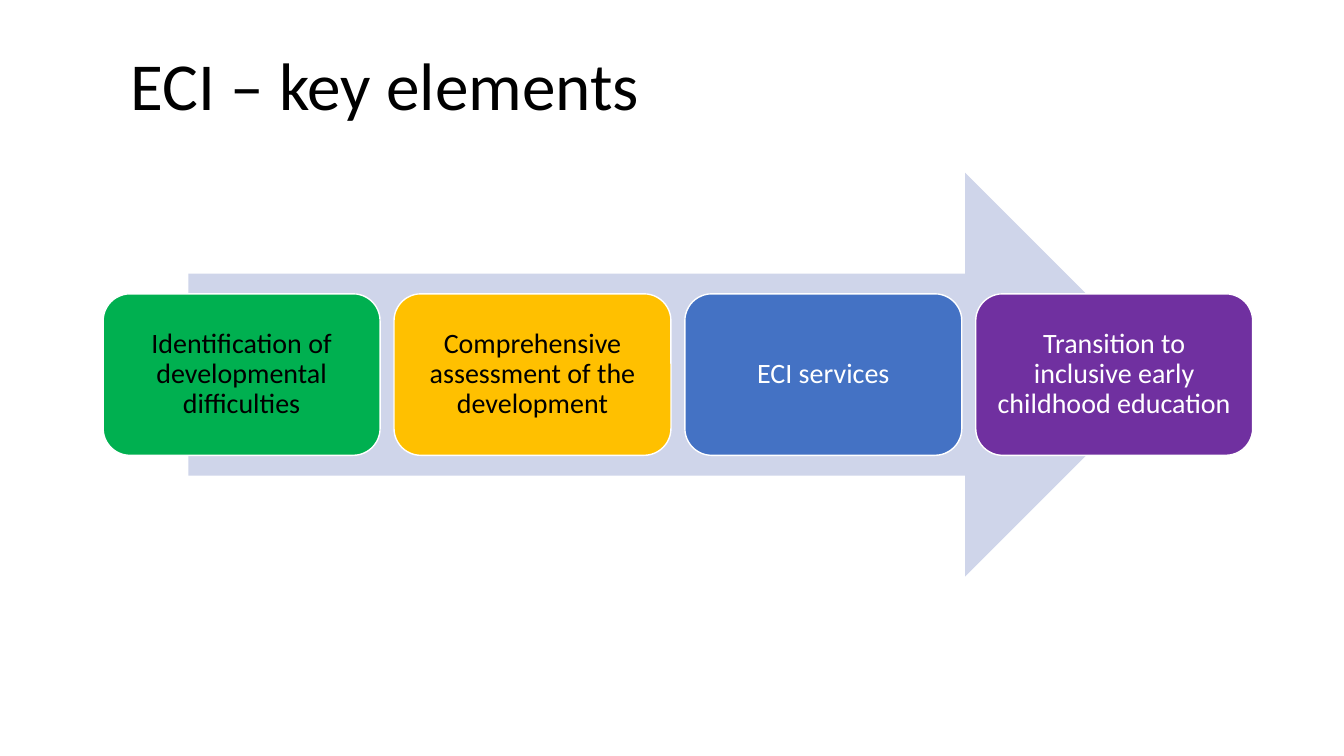
"""Build the slide on the key elements of ECI as four steps along an arrow."""
from dataclasses import dataclass

from pptx import Presentation
from pptx.dml.color import RGBColor as Color
from pptx.enum.shapes import MSO_SHAPE as Preset
from pptx.enum.text import MSO_ANCHOR as Anchor, PP_ALIGN as Align
from pptx.util import Cm, Pt


@dataclass(frozen=True)
class Theme:
    font: str = "Calibri"
    title_size: int = 48
    step_size: int = 20
    line_spacing: float = 0.9
    outline_width: int = 1
    black: str = "000000"
    white: str = "FFFFFF"
    arrow: str = "CFD5EA"
    green: str = "00B050"
    amber: str = "FFC000"
    blue: str = "4472C4"
    purple: str = "7030A0"


THEME = Theme()
TITLE = "ECI – key elements"
STEPS = [
    ("Identification of developmental difficulties", THEME.green, THEME.black),
    ("Comprehensive assessment of the development", THEME.amber, THEME.black),
    ("ECI services", THEME.blue, THEME.white),
    ("Transition to inclusive early childhood education", THEME.purple, THEME.white),
]

SLIDE_SIZE = (33.87, 19.05)
TITLE_BOX = (3.05, 0.86, 28.27, 2.74)
ARROW_BOX = (4.75, 4.35, 24.66, 10.18)
STEP_LEFT, STEP_WIDTH, STEP_HEIGHT, STEP_GAP = 2.6, 6.98, 4.07, 0.35
STEP_INSET = 0.2


def write(shape, text, size, color, align):
    frame = shape.text_frame
    frame.word_wrap = True
    frame.vertical_anchor = Anchor.MIDDLE
    paragraph = frame.paragraphs[0]
    paragraph.text = text
    paragraph.alignment = align
    paragraph.line_spacing = THEME.line_spacing
    paragraph.font.name = THEME.font
    paragraph.font.size = Pt(size)
    paragraph.font.color.rgb = Color.from_string(color)


def add_filled(slide, preset, box, fill):
    shape = slide.shapes.add_shape(preset, *map(Cm, box))
    shape.shadow.inherit = False
    shape.fill.solid()
    shape.fill.fore_color.rgb = Color.from_string(fill)
    shape.line.fill.background()
    return shape


def add_step(slide, box, text, fill, color):
    shape = add_filled(slide, Preset.ROUNDED_RECTANGLE, box, fill)
    shape.line.color.rgb = Color.from_string(THEME.white)
    shape.line.width = Pt(THEME.outline_width)
    frame = shape.text_frame
    frame.margin_left = frame.margin_right = Cm(STEP_INSET)
    frame.margin_top = frame.margin_bottom = Cm(STEP_INSET)
    write(shape, text, THEME.step_size, color, Align.CENTER)


def main():
    presentation = Presentation()
    presentation.slide_width, presentation.slide_height = map(Cm, SLIDE_SIZE)
    slide = presentation.slides.add_slide(presentation.slide_layouts[6])

    title = slide.shapes.add_textbox(*map(Cm, TITLE_BOX))
    write(title, TITLE, THEME.title_size, THEME.black, Align.LEFT)

    add_filled(slide, Preset.RIGHT_ARROW, ARROW_BOX, THEME.arrow)
    _, arrow_top, _, arrow_height = ARROW_BOX
    step_top = arrow_top + (arrow_height - STEP_HEIGHT) / 2
    for index, (text, fill, color) in enumerate(STEPS):
        left = STEP_LEFT + index * (STEP_WIDTH + STEP_GAP)
        add_step(slide, (left, step_top, STEP_WIDTH, STEP_HEIGHT), text, fill, color)

    presentation.save("out.pptx")


if __name__ == "__main__":
    main()
